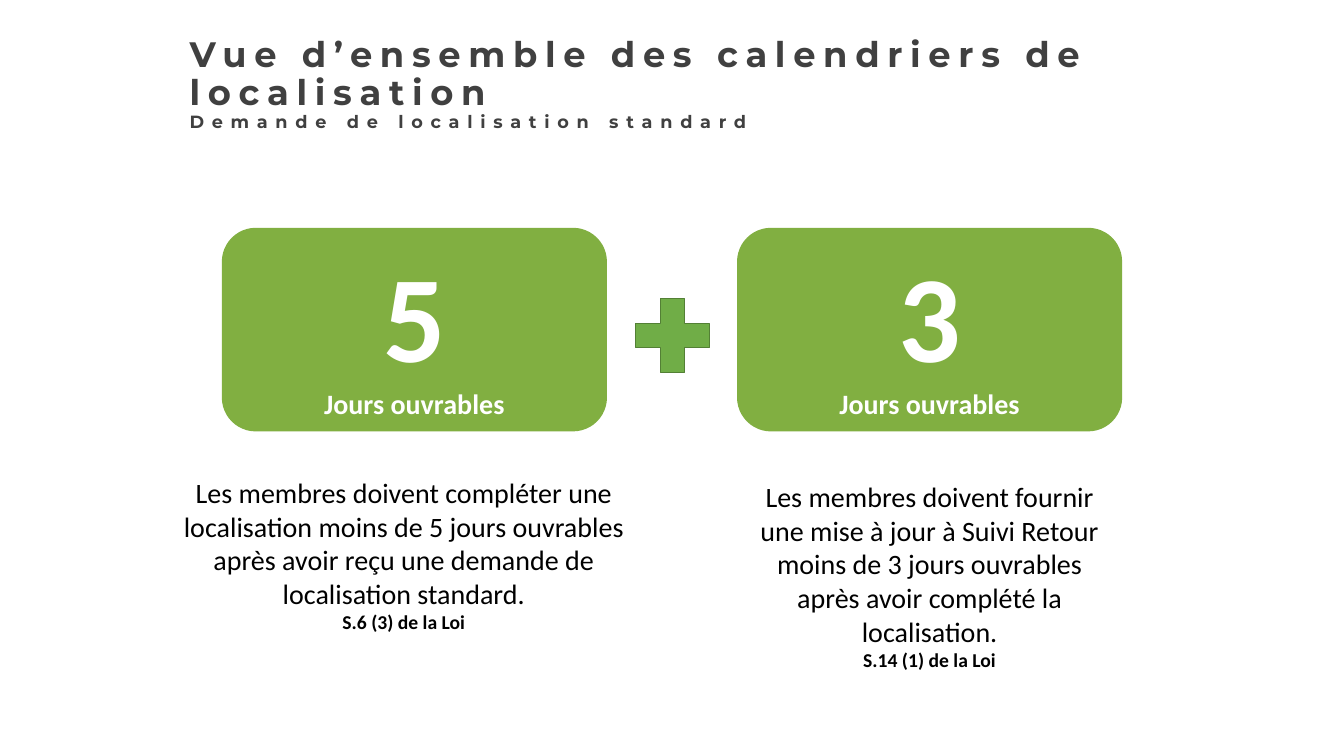
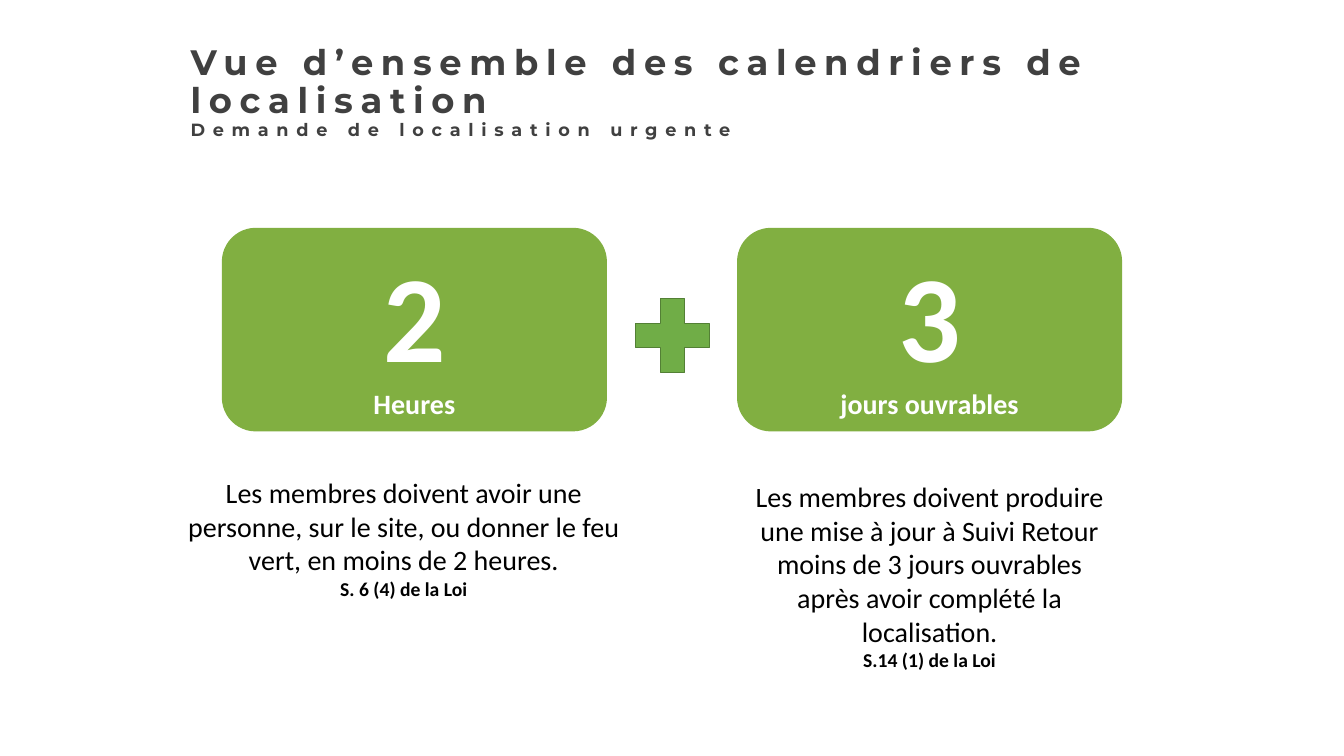
from pptx import Presentation
from pptx.dml.color import RGBColor
from pptx.enum.shapes import MSO_SHAPE
from pptx.enum.text import MSO_ANCHOR, MSO_AUTO_SIZE, PP_ALIGN
from pptx.util import Inches, Pt

COLORS = {
    "title": "404040",
    "card": "81AF41",
    "plus": "70AD47",
    "edge": "538035",
    "white": "FFFFFF",
    "black": "000000",
}
HEAD = "Vue d’ensemble des calendriers de localisation"
CARD_W, CARD_H, CARD_TOP = 3.82, 2.02, 2.26
LEFT, RIGHT = 2.2, 7.31

# Per slide: title box, subtitle, cards (number, unit), notes (text, source, height)
SLIDES = [
    {
        "box": (1.78, 0.32, 9.35, 1.12),
        "sub": "Demande de localisation standard",
        "cards": [("5", "Jours ouvrables"), ("3", "Jours ouvrables")],
        "notes": [
            ("Les membres doivent compléter une localisation moins de 5 jours "
             "ouvrables après avoir reçu une demande de localisation standard.",
             "S.6 (3) de la Loi", 1.68),
            ("Les membres doivent fournir une mise à jour à Suivi Retour moins de "
             "3 jours ouvrables après avoir complété la localisation.",
             "S.14 (1) de la Loi", 2.02),
        ],
    },
    {
        "box": (1.79, 0.4, 10.61, 1.12),
        "sub": "Demande de localisation urgente",
        "cards": [("2", "Heures"), ("3", "jours ouvrables")],
        "notes": [
            ("Les membres doivent avoir une personne, sur le site, ou donner le "
             "feu vert, en moins de 2 heures.",
             "S. 6 (4) de la Loi", 1.35),
            ("Les membres doivent produire une mise à jour à Suivi Retour moins de "
             "3 jours ouvrables après avoir complété la localisation.",
             "S.14 (1) de la Loi", 2.02),
        ],
    },
]


def color(name):
    return RGBColor.from_string(COLORS[name])


def write(frame, lines, font, tint, align):
    """Fill a frame with (text, size, bold) lines."""
    frame.word_wrap = True
    frame.text = "\n".join(text for text, _, _ in lines)
    for para, (_, size, bold) in zip(frame.paragraphs, lines):
        para.alignment = align
        for run in para.runs:
            run.font.name = font
            run.font.size = Pt(size)
            run.font.bold = bold
            run.font.color.rgb = color(tint)


def add_title(slide, box, sub):
    title = slide.shapes.title
    title.left, title.top, title.width, title.height = map(Inches, box)
    frame = title.text_frame
    write(frame, [(HEAD, 25.2, True), (sub, 12.6, True)],
          "Montserrat", "title", PP_ALIGN.LEFT)
    frame.auto_size = MSO_AUTO_SIZE.NONE
    frame.vertical_anchor = MSO_ANCHOR.TOP
    for para in frame.paragraphs:
        para.line_spacing = 0.9
        for run in para.runs:
            run._r.get_or_add_rPr().set("spc", "550")


def add_shape(slide, kind, box, fill):
    shape = slide.shapes.add_shape(kind, *map(Inches, box))
    shape.shadow.inherit = False
    shape.fill.solid()
    shape.fill.fore_color.rgb = color(fill)
    return shape


def add_card(slide, left, number, unit):
    box = (left, CARD_TOP, CARD_W, CARD_H)
    card = add_shape(slide, MSO_SHAPE.ROUNDED_RECTANGLE, box, "card")
    card.line.fill.background()
    card.text_frame.vertical_anchor = MSO_ANCHOR.MIDDLE
    write(card.text_frame, [(number, 88, True), (unit, 20, True)],
          "Calibri", "white", PP_ALIGN.CENTER)


def add_plus(slide):
    plus = add_shape(slide, MSO_SHAPE.MATH_PLUS, (6.17, 2.83, 1, 1), "plus")
    plus.line.color.rgb = color("edge")
    plus.line.width = Pt(1)


def add_note(slide, place, text, source, height):
    left, top, width = place
    note = slide.shapes.add_textbox(*map(Inches, (left, top, width, height)))
    write(note.text_frame, [(text, 20, False), (source, 14, True)],
          "Calibri", "black", PP_ALIGN.CENTER)
    note.text_frame.auto_size = MSO_AUTO_SIZE.SHAPE_TO_FIT_TEXT


def main():
    deck = Presentation()
    deck.slide_width, deck.slide_height = Inches(13.33), Inches(7.5)
    places = [(1.71, 4.67, 4.59), (RIGHT, 4.71, CARD_W)]
    for data in SLIDES:
        slide = deck.slides.add_slide(deck.slide_layouts[5])
        add_title(slide, data["box"], data["sub"])
        # Time limits joined by a plus sign
        for left, card in zip((LEFT, RIGHT), data["cards"]):
            add_card(slide, left, *card)
        add_plus(slide)
        # Explanations under the cards
        for place, note in zip(places, data["notes"]):
            add_note(slide, place, *note)
    deck.save("out.pptx")


if __name__ == "__main__":
    main()
